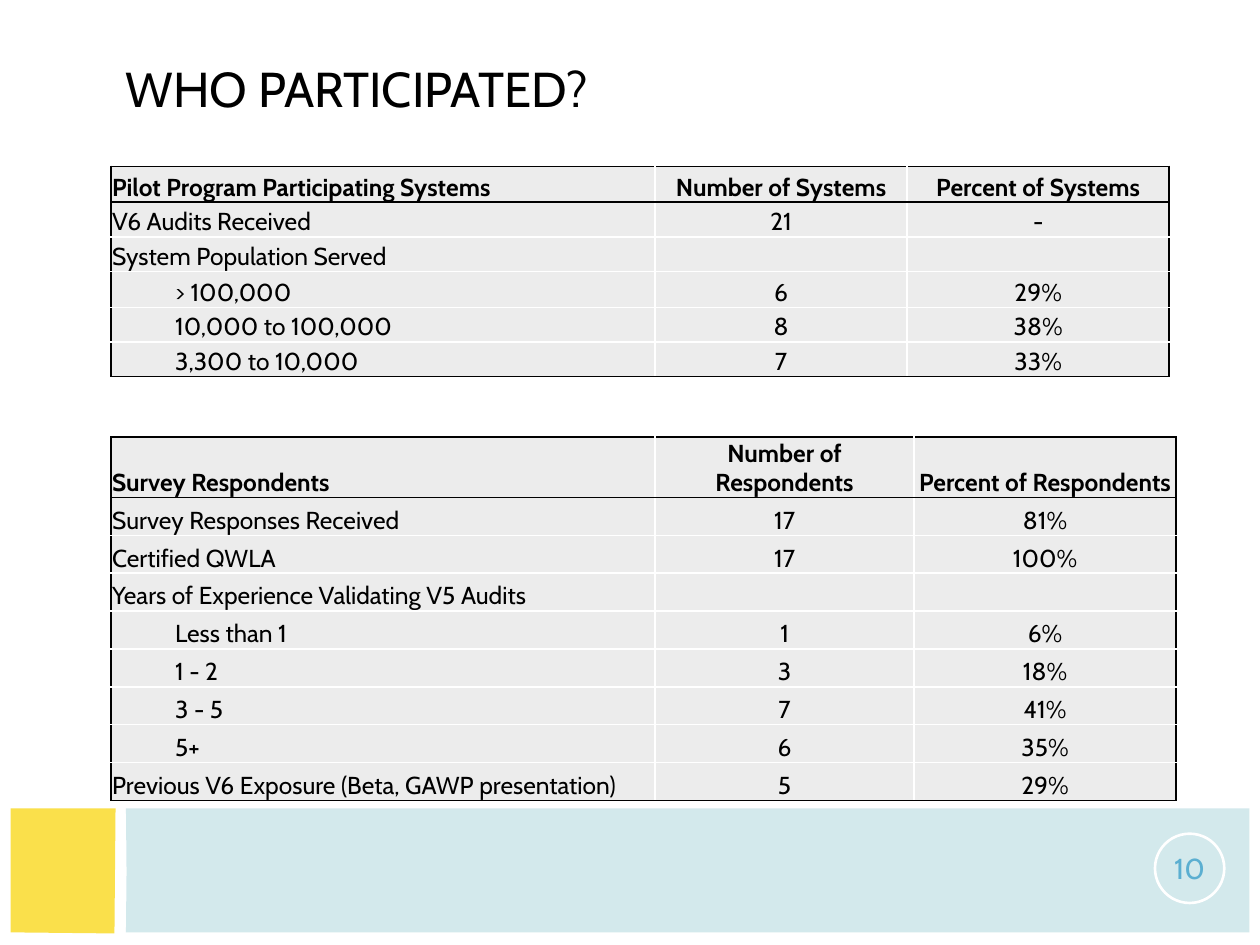
from lxml import etree
from pptx import Presentation
from pptx import util as u
from pptx.dml.color import RGBColor
from pptx.enum import shapes, text
from pptx.oxml.ns import qn

BLACK, WHITE, GREY = "000000", "FFFFFF", "ECECEC"
YELLOW, AQUA, BLUE = "FAE04B", "C8E4E8", "5BAFD1"
UNIT = u.Inches(1) / 12  # grid of 120 columns by 90 rows


def color(hex_code):
    return RGBColor.from_string(hex_code)


def grid(*lengths):
    return [u.Emu(round(n * UNIT)) for n in lengths]


class Deck:
    font = "Cabin"

    def __init__(self):
        self.prs = Presentation()
        self.prs.slide_width, self.prs.slide_height = grid(120, 90)
        self.slide = self.prs.slides.add_slide(self.prs.slide_layouts[6])

    def set_text(self, paragraph, words, size, ink=BLACK, bold=False, centred=False):
        paragraph.text = words
        paragraph.alignment = text.PP_ALIGN.CENTER if centred else text.PP_ALIGN.LEFT
        font = paragraph.font
        font.name, font.size, font.bold = self.font, u.Pt(size), bold
        font.color.rgb = color(ink)

    def panel(self, points, fill, opacity=100):
        corners = [tuple(grid(*point)) for point in points]
        builder = self.slide.shapes.build_freeform(*corners[0])
        builder.add_line_segments(corners[1:], close=True)
        shape = builder.convert_to_shape()
        shape.shadow.inherit = False
        shape.line.fill.background()
        shape.fill.solid()
        shape.fill.fore_color.rgb = color(fill)
        if opacity < 100:
            tint = shape.fill._xPr.find(".//" + qn("a:srgbClr"))
            etree.SubElement(tint, qn("a:alpha"), val=str(opacity * 1000))

    def title(self, words, *place):
        frame = self.slide.shapes.add_textbox(*grid(*place)).text_frame
        frame.word_wrap = True
        frame.vertical_anchor = text.MSO_ANCHOR.MIDDLE
        self.set_text(frame.paragraphs[0], words, 28)

    def page_number(self, number, *place):
        ring = self.slide.shapes.add_shape(shapes.MSO_SHAPE.OVAL, *grid(*place))
        ring.shadow.inherit = False
        ring.fill.background()
        ring.line.color.rgb = color(WHITE)
        ring.line.width = u.Pt(1.5)
        frame = ring.text_frame
        frame.word_wrap = False
        frame.vertical_anchor = text.MSO_ANCHOR.MIDDLE
        frame.margin_left = frame.margin_right = u.Inches(0.01)
        frame.margin_top = frame.margin_bottom = u.Inches(0.01)
        self.set_text(frame.paragraphs[0], number, 16.5, BLUE, centred=True)

    def border(self, cell, **edges):
        props = cell._tc.get_or_add_tcPr()
        for position, (side, ink) in enumerate(edges.items()):
            line = etree.Element(qn("a:ln" + side), w=str(u.Pt(1)))
            fill = etree.SubElement(line, qn("a:solidFill"))
            etree.SubElement(fill, qn("a:srgbClr"), val=ink)
            props.insert(position, line)

    def table(self, rows, left, top, widths, heights):
        """Each row is (label, count, share); a label starting with a tab is indented."""
        last_row, last_col = len(rows) - 1, len(widths) - 1
        table = self.slide.shapes.add_table(
            len(rows), len(widths), *grid(left, top, sum(widths), sum(heights))).table
        table.first_row = table.horz_banding = False
        for column, width in zip(table.columns, grid(*widths)):
            column.width = width
        for row, height in zip(table.rows, grid(*heights)):
            row.height = height
        for r, row in enumerate(rows):
            for c, words in enumerate(row):
                cell = table.cell(r, c)
                cell.fill.solid()
                cell.fill.fore_color.rgb = color(GREY)
                cell.vertical_anchor = text.MSO_ANCHOR.BOTTOM
                cell.margin_left = cell.margin_right = cell.margin_top = u.Inches(0.01)
                cell.margin_bottom = 0
                paragraph = cell.text_frame.paragraphs[0]
                self.set_text(paragraph, words.strip(), 14, bold=r == 0, centred=c > 0)
                if not words:  # keeps empty cells at the row's text size
                    paragraph._p.get_or_add_endParaRPr().set("sz", "1400")
                if words.startswith("\t"):
                    paragraph.level = 1
                    properties = paragraph._p.get_or_add_pPr()
                    properties.set("marL", str(u.Inches(0.5)))
                    properties.set("indent", "0")
                # Black frame and header rule, white inner lines
                self.border(cell,
                            L=BLACK if c == 0 else WHITE,
                            R=BLACK if c == last_col else WHITE,
                            T=BLACK if r < 2 else WHITE,
                            B=BLACK if r in (0, last_row) else WHITE)


def main():
    deck = Deck()

    # Footer band
    deck.panel([(1, 88.8), (1, 77), (11, 77), (10.9, 88.9)], YELLOW)
    deck.panel([(12, 88.8), (12.06, 83), (12, 77), (119, 77), (119, 88.8)], AQUA, 80)

    # Title and page number
    deck.title("WHO PARTICIPATED?", 10.8, 4.8, 98.6, 7.2)
    deck.page_number("10", 110, 79.4, 6.6, 6.6)

    # Participating systems
    systems = [
        ("Pilot Program Participating Systems", "Number of Systems", "Percent of Systems"),
        ("V6 Audits Received", "21", "-"),
        ("System Population Served", "", ""),
        ("\t> 100,000", "6", "29%"),
        ("\t10,000 to 100,000", "8", "38%"),
        ("\t3,300 to 10,000", "7", "33%"),
    ]
    deck.table(systems, 10.56, 15.84, (51.84, 24, 24.96),
               (3.42, 3.3, 3.3, 3.42, 3.3, 3.3))

    # Survey respondents
    respondents = [
        ("Survey Respondents", "Number of Respondents", "Percent of Respondents"),
        ("Survey Responses Received", "17", "81%"),
        ("Certified QWLA", "17", "100%"),
        ("Years of Experience Validating V5 Audits", "", ""),
        ("\tLess than 1", "1", "6%"),
        ("\t1 - 2", "3", "18%"),
        ("\t3 - 5", "7", "41%"),
        ("\t5+", "6", "35%"),
        ("Previous V6 Exposure (Beta, GAWP presentation)", "5", "29%"),
    ]
    deck.table(respondents, 10.56, 41.64, (51.84, 24.66, 24.96),
               [3.61] * len(respondents))

    deck.prs.save("out.pptx")


if __name__ == "__main__":
    main()
